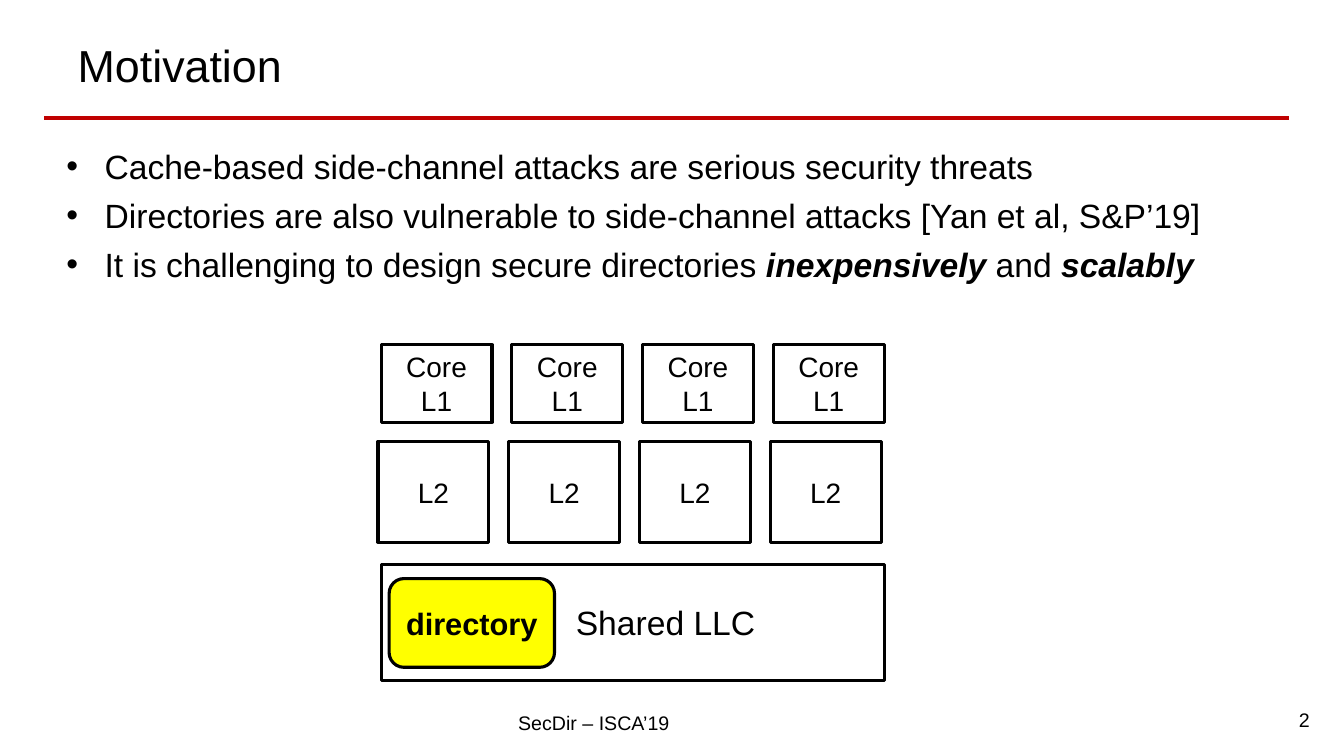
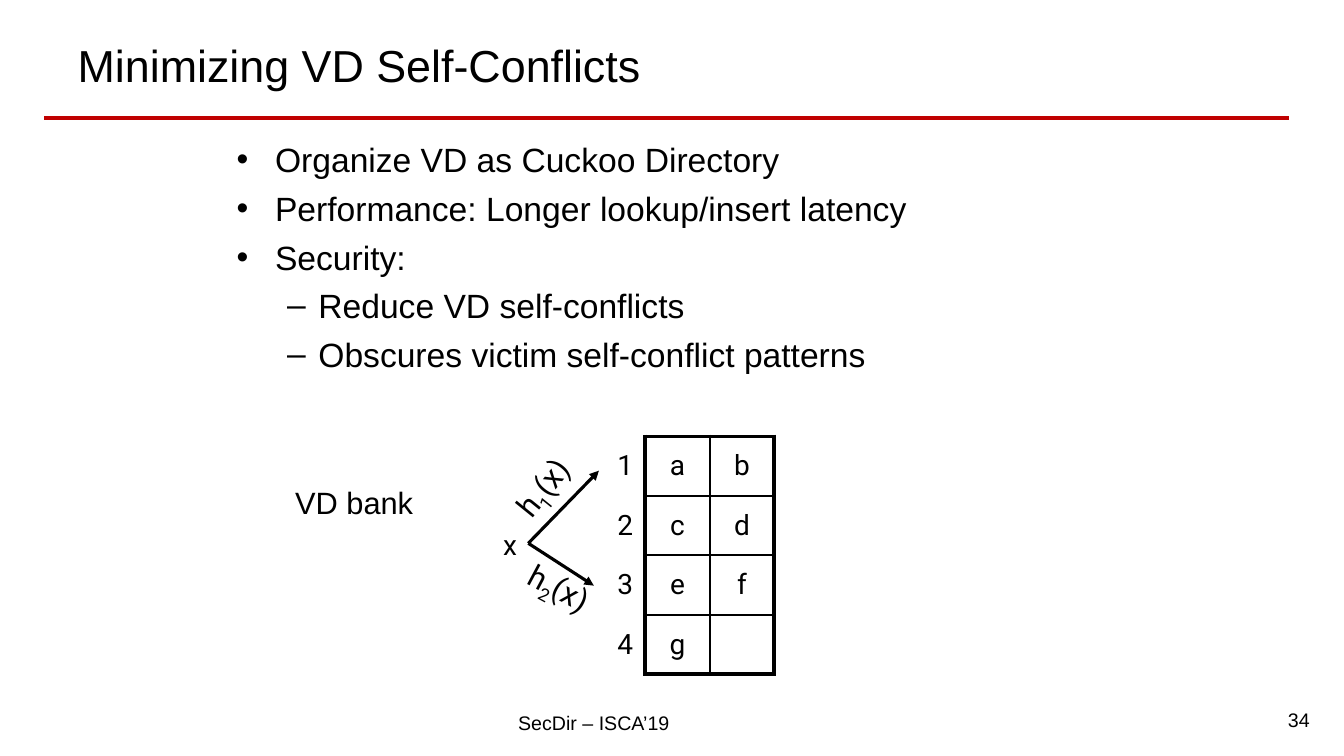
from lxml import etree
from pptx import Presentation
from pptx import util as u
from pptx.dml.color import RGBColor
from pptx.enum import shapes, text
from pptx.oxml import ns

PX = 9144  # EMU in one px, 100 px to the inch
COLORS = {"ink": "000000", "paper": "FFFFFF", "rule": "C00000", "mark": "FFFF00"}
LEFT, CENTER, RIGHT = text.PP_ALIGN.LEFT, text.PP_ALIGN.CENTER, text.PP_ALIGN.RIGHT
TOP, MIDDLE = text.MSO_ANCHOR.TOP, text.MSO_ANCHOR.MIDDLE
STRONG = {"bold": True, "italic": True}
# Bullet sign, left margin and hanging indent by level, in px
BULLETS = [("•", 38, -38), ("–", 81, -31)]


def px(*lengths):
    return [u.Emu(round(length * PX)) for length in lengths]


def color(name):
    return RGBColor.from_string(COLORS[name])


def add_xml(parent, tag, **attributes):
    return etree.SubElement(parent, ns.qn(tag), attributes)


def set_values(target, values):
    for name, value in values.items():
        setattr(target, name, value)


def write(frame, paragraphs, size, align=LEFT, anchor=TOP, wrap=True,
          font="Arial", bold=False, levels=None):
    """Fill a frame; a paragraph is a string or a list of (text, format) runs."""
    set_values(frame, {"word_wrap": wrap, "vertical_anchor": anchor,
                       "auto_size": text.MSO_AUTO_SIZE.NONE})
    for index, content in enumerate(paragraphs):
        paragraph = frame.add_paragraph() if index else frame.paragraphs[0]
        paragraph.alignment = align
        if levels:
            add_bullet(paragraph, levels[index], first=index == 0)
        runs = [(content, {})] if isinstance(content, str) else content
        for words, formats in runs:
            run = paragraph.add_run()
            run.text = words
            values = {"size": u.Pt(size), "name": font, "bold": bold, **formats}
            baseline = values.pop("baseline", None)
            set_values(run.font, values)
            run.font.color.rgb = color("ink")
            if baseline:
                run._r.get_or_add_rPr().set("baseline", baseline)


def add_bullet(paragraph, level, first):
    sign, margin, indent = BULLETS[level]
    properties = paragraph._p.get_or_add_pPr()
    properties.set("marL", str(margin * PX))
    properties.set("indent", str(indent * PX))
    add_xml(properties, "a:buFont", typeface="Arial")
    add_xml(properties, "a:buChar", char=sign)
    set_values(paragraph, {"level": level, "space_before": u.Pt(0 if first else 6)})


def add_text(slide, box, paragraphs, size, rotation=0, **formats):
    label = slide.shapes.add_textbox(*px(*box))
    label.rotation = rotation
    write(label.text_frame, paragraphs, size, **formats)


def add_box(parent, box, paragraphs, size, fill=None, rounded=False,
            text_left=10, **formats):
    kind = shapes.MSO_SHAPE.ROUNDED_RECTANGLE if rounded else shapes.MSO_SHAPE.RECTANGLE
    block = parent.add_shape(kind, *px(*box))
    block.shadow.inherit = False
    if fill:
        block.fill.solid()
        block.fill.fore_color.rgb = color(fill)
    else:
        block.fill.background()
    block.line.color.rgb = color("ink")
    block.line.width = u.Pt(2.25)
    block.text_frame.margin_left = px(text_left)[0]
    write(block.text_frame, paragraphs, size, align=CENTER, anchor=MIDDLE, **formats)


def add_line(slide, start, end, width, line_color="ink", arrow=False):
    line = slide.shapes.add_connector(shapes.MSO_CONNECTOR.STRAIGHT, *px(*start, *end))
    line.line.color.rgb = color(line_color)
    line.line.width = u.Pt(width)
    if arrow:
        add_xml(line.line._get_or_add_ln(), "a:tailEnd", type="triangle")
    add_xml(line._element.spPr, "a:effectLst")


def start_slide(deck, title, number):
    """Title, red rule, footer and page number shared by the slides."""
    slide = deck.slides.add_slide(deck.slide_layouts[5])
    heading = slide.shapes.title
    set_values(heading, dict(zip(("left", "top", "width", "height"),
                                 px(67, 10, 1178, 108))))
    write(heading.text_frame, [title], 32, anchor=MIDDLE)
    add_line(slide, (44, 117), (1278, 117), 3.25, "rule")
    add_text(slide, (211, 700, 756, 34), ["SecDir – ISCA’19"], 14, align=CENTER)
    add_text(slide, (998, 697, 311, 52), [number], 14, align=RIGHT)
    return slide


def draw_cache_hierarchy(slide, left, top, width):
    """Four cores over private L2 caches and one shared LLC."""
    parts = slide.shapes.add_group_shape().shapes
    cores, cell = 4, 110
    pitch = (width - cell) / (cores - 1)
    for shift, offset, height, label in ((0, 0, 77, ["Core", "L1"]),
                                         (-3, 96, 100, ["L2"])):
        for core in range(cores):
            add_box(parts, (left + shift + core * pitch, top + offset, cell, height),
                    label, 20)
    add_box(parts, (left, top + 218, width, 115), ["Shared LLC"], 24, text_left=75)
    add_box(slide.shapes, (left + 8, top + 232, 164, 88), ["directory"], 22,
            fill="mark", rounded=True, bold=True, wrap=False)


def set_borders(cell, widths):
    """Widths in points for left, right, top and bottom; 0 means no line."""
    properties = cell._tc.get_or_add_tcPr()
    for side, width in zip("LRTB", widths):
        line = add_xml(properties, f"a:ln{side}", w=str(u.Pt(width)))
        if width:
            add_xml(add_xml(line, "a:solidFill"), "a:srgbClr", val=COLORS["ink"])
        else:
            add_xml(line, "a:noFill")


def draw_bank_table(slide, left, top):
    """Numbered rows with two ways each, framed by a thick border."""
    entries = ["ab", "cd", "ef", "g"]
    widths, row_height = (40, 64, 64), 59
    last = len(entries) - 1
    table = slide.shapes.add_table(
        len(entries), len(widths),
        *px(left, top, sum(widths), row_height * len(entries))).table
    set_values(table, {"first_row": False, "horz_banding": False})
    for column, width in zip(table.columns, px(*widths)):
        column.width = width
    thick, thin = 3, 1.5
    for row, ways in enumerate(entries):
        table.rows[row].height = px(row_height)[0]
        for column, words in enumerate([str(row + 1), *ways.ljust(2)]):
            cell = table.cell(row, column)
            if column:
                set_borders(cell, (thick if column == 1 else thin,
                                   thick if column == 2 else thin,
                                   thick if row == 0 else thin,
                                   thick if row == last else thin))
            else:
                set_borders(cell, (0, thick, 0, 0))
            cell.fill.solid()
            cell.fill.fore_color.rgb = color("paper")
            cell.vertical_anchor = MIDDLE
            if words.strip():
                write_cell(cell, words)


def write_cell(cell, words):
    paragraph = cell.text_frame.paragraphs[0]
    paragraph.alignment = CENTER
    run = paragraph.add_run()
    run.text = words
    set_values(run.font, {"size": u.Pt(20), "name": "Roboto", "bold": False})
    run.font.color.rgb = color("ink")


def draw_hashing(slide, left, top):
    """Key x sent by two hash functions to two rows of the bank."""
    add_text(slide, (left, top + 59, 34, 44), ["x"], 20, align=CENTER,
             font="Roboto", wrap=False)
    key = (left + 35, top + 80)
    hashes = [("1", (105, 8), (7, 0), 309), ("2", (100, 122), (24, 101), 28.1)]
    for index, tip, label, rotation in hashes:
        add_line(slide, key, (left + tip[0], top + tip[1]), 2.25, arrow=True)
        name = [("h", {}), (index, {"baseline": "-25000"}), ("(x)", {})]
        add_text(slide, (left + label[0], top + label[1], 85, 47), [name], 22,
                 rotation=rotation, font="Roboto", wrap=False)


def build_motivation(deck):
    slide = start_slide(deck, "Motivation", "2")
    points = [
        "Cache-based side-channel attacks are serious security threats",
        "Directories are also vulnerable to side-channel attacks [Yan et al, S&P’19]",
        [("It is challenging to design secure directories ", {}),
         ("inexpensively", STRONG), (" and ", {}), ("scalably", STRONG)],
    ]
    add_text(slide, (56, 140, 1200, 290), points, 24, levels=[0, 0, 0])
    draw_cache_hierarchy(slide, 378, 342, 499)


def build_self_conflicts(deck):
    slide = start_slide(deck, "Minimizing VD Self-Conflicts", "34")
    points = [
        "Organize VD as Cuckoo Directory",
        "Performance: Longer lookup/insert latency",
        "Security:",
        "Reduce VD self-conflicts",
        "Obscures victim self-conflict patterns",
    ]
    add_text(slide, (225, 133, 900, 515), points, 24, levels=[0, 0, 0, 1, 1])
    draw_bank_table(slide, 600, 433)
    draw_hashing(slide, 489, 459)
    add_text(slide, (283, 475, 140, 47), ["VD bank"], 22, wrap=False)


def main():
    deck = Presentation()
    deck.slide_width, deck.slide_height = px(1333, 750)
    build_motivation(deck)
    build_self_conflicts(deck)
    deck.save("out.pptx")


if __name__ == "__main__":
    main()
